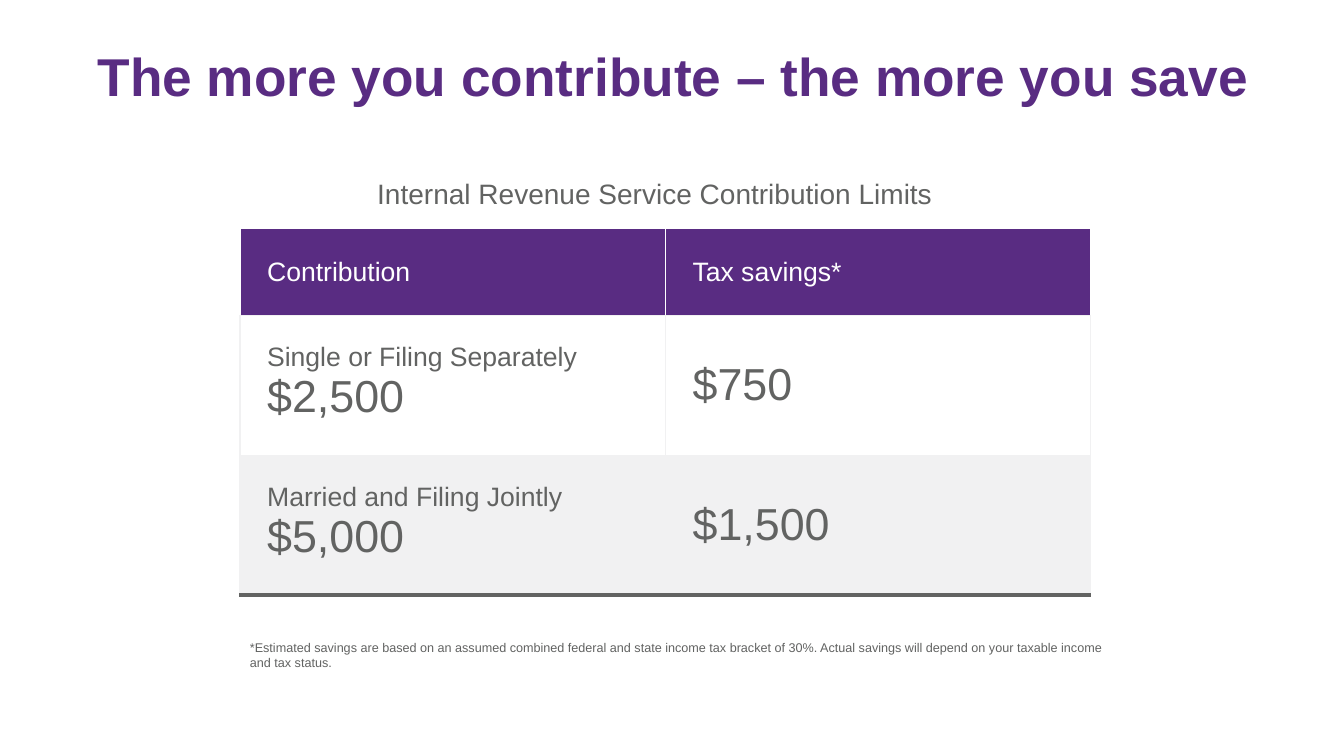
from lxml import etree
from pptx import Presentation
from pptx.dml.color import RGBColor
from pptx.enum.text import MSO_ANCHOR, PP_ALIGN
from pptx.oxml.ns import qn
from pptx.util import Inches, Pt

TOP, MIDDLE = MSO_ANCHOR.TOP, MSO_ANCHOR.MIDDLE
LEFT, CENTER = PP_ALIGN.LEFT, PP_ALIGN.CENTER
PURPLE = RGBColor(0x59, 0x2C, 0x82)
GRAY = RGBColor(0x62, 0x63, 0x62)
PALE = RGBColor(0xF1, 0xF1, 0xF2)
WHITE = RGBColor(0xFF, 0xFF, 0xFF)

TITLE_FONT = {"size": Pt(38), "bold": True, "color": PURPLE}
CAPTION_FONT = {"size": Pt(20), "bold": False, "color": GRAY}
NOTE_FONT = {"size": Pt(9), "bold": False, "color": GRAY}
HEADER_FONT = {"size": Pt(19), "bold": False, "color": WHITE}
LABEL_FONT = {"size": Pt(19), "bold": False, "color": GRAY}
AMOUNT_FONT = {"size": Pt(32), "bold": False, "color": GRAY}

TEXTS = [
    ("The more you contribute – the more you save",
     (0.87, 0.33, 12, 0.84), TITLE_FONT, LEFT, MIDDLE, 0.1),
    ("Internal Revenue Service Contribution Limits",
     (3.29, 1.7, 6.41, 0.55), CAPTION_FONT, CENTER, TOP, 0.05),
    ("*Estimated savings are based on an assumed combined federal and state income "
     "tax bracket of 30%. Actual savings will depend on your taxable income and tax status.",
     (2.38, 6.3, 8.68, 0.52), NOTE_FONT, LEFT, TOP, 0.05),
]

HEADERS = ["Contribution", "Tax savings*"]
SAVINGS = [
    ("Single or Filing Separately", "$2,500", "$750"),
    ("Married and Filing Jointly", "$5,000", "$1,500"),
]
ROWS = [[[(header, HEADER_FONT)] for header in HEADERS]] + [
    [[(status, LABEL_FONT), (amount, AMOUNT_FONT)], [(saving, AMOUNT_FONT)]]
    for status, amount, saving in SAVINGS
]
ROW_STYLES = [
    {"height": 0.84, "fill": PURPLE, "edge": WHITE, "base": (PALE, 1)},
    {"height": 1.38, "fill": None, "edge": PALE, "base": (PALE, 1)},
    {"height": 1.38, "fill": PALE, "edge": PALE, "base": (GRAY, 3)},
]
TABLE_LEFT, TABLE_TOP, COLUMN_WIDTH, CELL_MARGIN = 2.38, 2.27, 4.22, 0.27


def write(frame, lines, align=LEFT):
    for index, (text, style) in enumerate(lines):
        para = frame.paragraphs[0] if index == 0 else frame.add_paragraph()
        para.alignment = align
        span = para.add_run()
        span.text = text
        span.font.name = "Arial"
        for name, value in style.items():
            if name == "color":
                span.font.color.rgb = value
            else:
                setattr(span.font, name, value)


def set_margins(target, margin):
    for side in ("left", "right", "top", "bottom"):
        setattr(target, f"margin_{side}", Inches(margin))


def add_text(page, text, area, style, align, anchor, margin):
    box = page.shapes.add_textbox(*map(Inches, area))
    frame = box.text_frame
    frame.word_wrap = True
    frame.vertical_anchor = anchor
    frame.margin_left = frame.margin_right = Inches(0.1)
    frame.margin_top = frame.margin_bottom = Inches(margin)
    write(frame, [(text, style)], align)


def set_borders(cell, edge, base):
    properties = cell._tc.get_or_add_tcPr()
    sides = [("lnL", (edge, 1)), ("lnR", (edge, 1)), ("lnT", (edge, 1)), ("lnB", base)]
    for index, (tag, (color, width)) in enumerate(sides):
        line = etree.Element(qn(f"a:{tag}"), w=str(Pt(width)))
        fill = etree.SubElement(line, qn("a:solidFill"))
        etree.SubElement(fill, qn("a:srgbClr"), val=str(color))
        properties.insert(index, line)


def add_savings_table(page):
    area = (TABLE_LEFT, TABLE_TOP, COLUMN_WIDTH * len(HEADERS),
            sum(style["height"] for style in ROW_STYLES))
    table = page.shapes.add_table(len(ROWS), len(HEADERS), *map(Inches, area)).table
    table.first_row = table.horz_banding = False
    for column in table.columns:
        column.width = Inches(COLUMN_WIDTH)
    for row, (contents, style) in enumerate(zip(ROWS, ROW_STYLES)):
        table.rows[row].height = Inches(style["height"])
        for column, lines in enumerate(contents):
            cell = table.cell(row, column)
            set_margins(cell, CELL_MARGIN)
            cell.vertical_anchor = MIDDLE if len(lines) == 1 else TOP
            if style["fill"] is None:
                cell.fill.background()
            else:
                cell.fill.solid()
                cell.fill.fore_color.rgb = style["fill"]
            set_borders(cell, style["edge"], style["base"])
            write(cell.text_frame, lines)


def main():
    deck = Presentation()
    deck.slide_width, deck.slide_height = Inches(13.33), Inches(7.5)
    page = deck.slides.add_slide(deck.slide_layouts[6])
    for item in TEXTS:
        add_text(page, *item)
    add_savings_table(page)
    deck.save("out.pptx")


if __name__ == "__main__":
    main()
